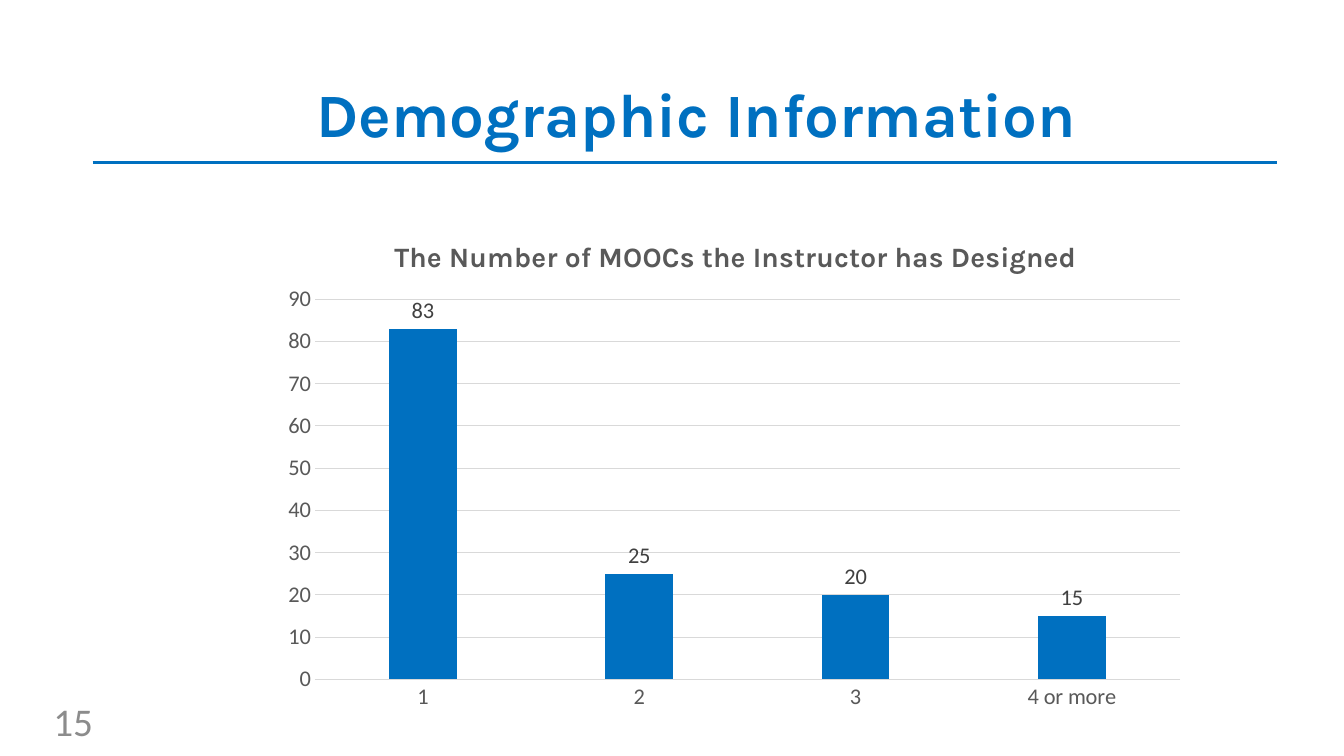
from lxml import etree
from pptx import Presentation
from pptx.chart.data import CategoryChartData
from pptx.dml.color import RGBColor
from pptx.enum.chart import XL_CHART_TYPE, XL_LABEL_POSITION, XL_TICK_MARK
from pptx.enum.shapes import MSO_CONNECTOR
from pptx.enum.text import MSO_ANCHOR, PP_ALIGN
from pptx.oxml import parse_xml
from pptx.oxml.ns import nsdecls, qn
from pptx.util import Inches, Pt

COLUMN = XL_CHART_TYPE.COLUMN_CLUSTERED
OUTSIDE = XL_LABEL_POSITION.OUTSIDE_END
NO_TICK = XL_TICK_MARK.NONE
STRAIGHT = MSO_CONNECTOR.STRAIGHT
MIDDLE = MSO_ANCHOR.MIDDLE
CENTER, RIGHT = PP_ALIGN.CENTER, PP_ALIGN.RIGHT

COLORS = {"blue": "0070C0", "gray": "8C8C8C", "axis": "595959",
          "label": "404040", "grid": "D9D9D9"}


def color(name):
    return RGBColor.from_string(COLORS[name])


def style(item, **values):
    for name, value in values.items():
        setattr(item, name, value)


def layout(**parts):
    """Build a manual chart layout from fractions of the chart's size."""
    target = '<c:layoutTarget val="inner"/>' if "w" in parts else ""
    modes = "".join(f'<c:{key}Mode val="edge"/>' for key in "xy")
    sizes = "".join(f'<c:{key} val="{val}"/>' for key, val in parts.items())
    return parse_xml(f'<c:layout {nsdecls("c")}><c:manualLayout>{target}'
                     f'{modes}{sizes}</c:manualLayout></c:layout>')


class Page:
    def __init__(self, deck):
        self.slide = deck.slides.add_slide(deck.slide_layouts[5])
        self.head = "Karla"
        self.body = "Calibri"

    def font(self, font, size, tint, face=None, bold=False):
        style(font, size=Pt(size), name=face or self.body, bold=bold)
        font.color.rgb = color(tint)

    def fill(self, frame, text, align, **look):
        style(frame, word_wrap=True, vertical_anchor=MIDDLE)
        line = frame.paragraphs[0]
        line.alignment = align
        run = line.add_run()
        run.text = text
        self.font(run.font, **look)
        return line

    def title(self, text, box):
        shape = self.slide.shapes.title
        style(shape, **dict(zip(("left", "top", "width", "height"),
                                map(Inches, box))))
        line = self.fill(shape.text_frame, text, CENTER, size=44, tint="blue",
                         face=self.head, bold=True)
        line.line_spacing = 0.9

    def text(self, text, box):
        shape = self.slide.shapes.add_textbox(*map(Inches, box))
        self.fill(shape.text_frame, text, RIGHT, size=28, tint="gray")

    def rule(self, ends):
        line = self.slide.shapes.add_connector(STRAIGHT, *map(Inches, ends))
        line.line.color.rgb = color("blue")
        line.line.width = Pt(2)
        props = line._element.spPr
        etree.SubElement(props, qn("a:effectLst"))

    def stroke(self, line):
        line.color.rgb = color("grid")
        line.width = Pt(0.75)

    def chart(self, title, values, box):
        data = CategoryChartData(number_format="0")
        data.categories = list(values)
        data.add_series("Series 1", list(values.values()))
        chart = self.slide.shapes.add_chart(
            COLUMN, *map(Inches, box), data).chart
        style(chart, has_legend=False, has_title=True)
        chart.font.size = Pt(10)
        chart.font.name = self.body

        run = chart.chart_title.text_frame.paragraphs[0].add_run()
        run.text = title
        self.font(run.font, 20, "axis", self.head, True)
        chart.chart_title.include_in_layout = False
        self.place(chart.chart_title._element, x=0.13, y=0.05)

        for axis in (chart.category_axis, chart.value_axis):
            style(axis, major_tick_mark=NO_TICK, minor_tick_mark=NO_TICK)
            self.font(axis.tick_labels.font, 16, "axis")
        self.stroke(chart.category_axis.format.line)
        scale = chart.value_axis
        style(scale, minimum_scale=0, maximum_scale=90, major_unit=10)
        scale.format.line.fill.background()
        self.stroke(scale.major_gridlines.format.line)

        plot = chart.plots[0]
        style(plot, gap_width=219, overlap=-27, vary_by_categories=False,
              has_data_labels=True)
        style(plot.data_labels, show_value=True, position=OUTSIDE,
              number_format="0", number_format_is_linked=False)
        self.font(plot.data_labels.font, 16, "label")
        bars = plot.series[0].format.fill
        bars.solid()
        bars.fore_color.rgb = color("blue")
        area = chart._chartSpace.chart.plotArea
        self.place(area, x=0.05, y=0.18, w=0.93, h=0.74)

    def place(self, part, **parts):
        """Give a chart part a fixed place."""
        old = part.find(qn("c:layout"))
        if old is not None:
            part.remove(old)
        text = part.find(qn("c:tx"))
        part.insert(0 if text is None else 1, layout(**parts))


def main():
    deck = Presentation()
    style(deck, slide_width=Inches(13.33), slide_height=Inches(7.5))
    page = Page(deck)
    page.title("Demographic Information", (0.7, 0.44, 12.42, 1.45))
    page.rule((0.92, 1.61, 12.67, 1.61))
    page.text("15", (-1.98, 6.95, 3, 0.4))
    page.chart("The Number of MOOCs the Instructor has Designed",
               {"1": 83, "2": 25, "3": 20, "4 or more": 15},
               (2.66, 2.05, 9.23, 5.1))
    deck.save("out.pptx")


if __name__ == "__main__":
    main()
